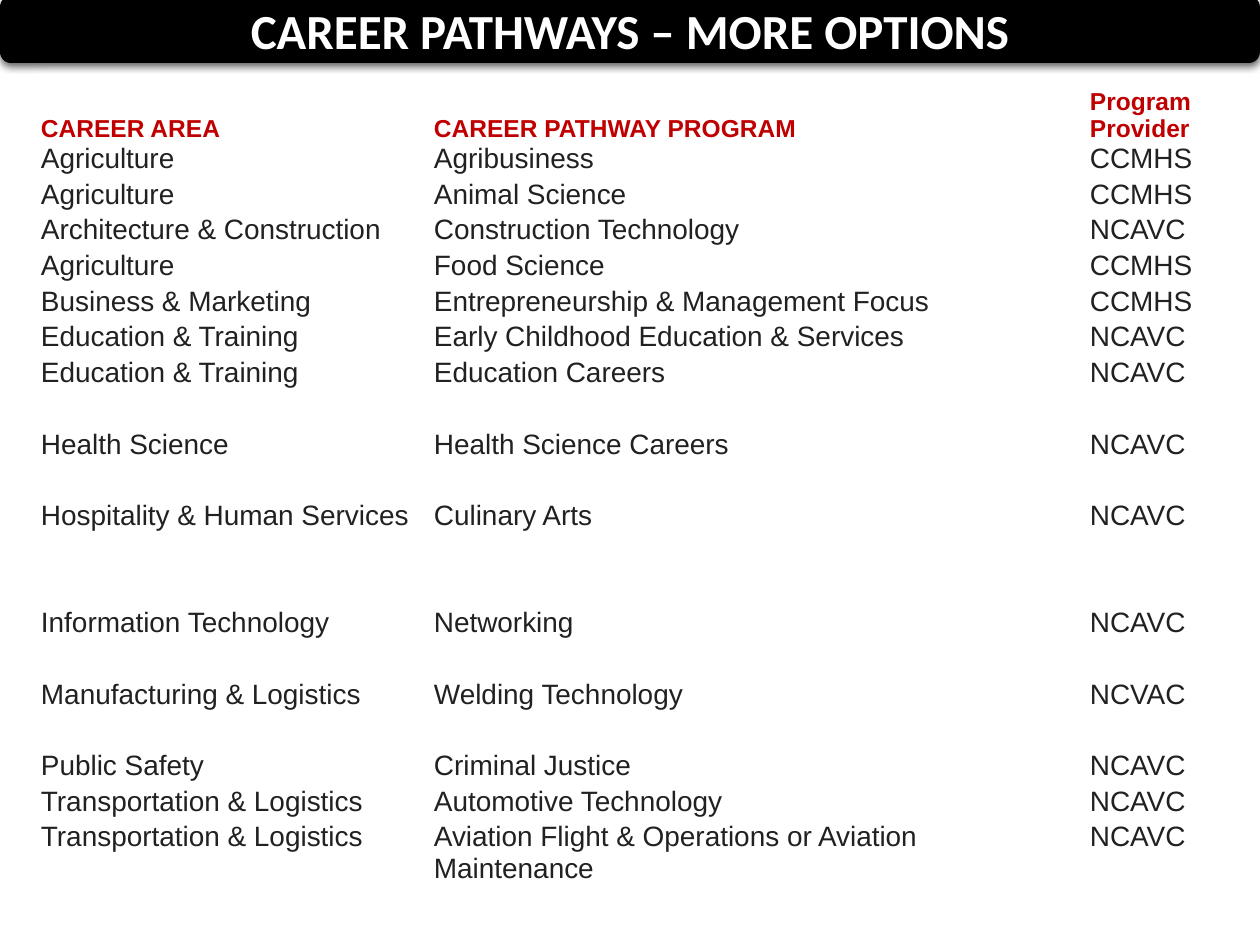
import lxml.etree
import pptx
import pptx.dml.color
import pptx.enum.shapes
import pptx.enum.text
import pptx.oxml
import pptx.oxml.ns
import pptx.util

ANCHOR = pptx.enum.text.MSO_ANCHOR
ALIGN = pptx.enum.text.PP_ALIGN
RGB = pptx.dml.color.RGBColor.from_string

THEME = {
    "banner": "000000",
    "title": {"name": "Calibri", "size": 28, "bold": True, "color": "FFFFFF"},
    "head": {"name": "Arial", "size": 14, "bold": True, "color": "C00000"},
    "body": {"name": "Arial", "size": 16, "bold": False, "color": "212120"},
}
HEADER = ("CAREER AREA", "CAREER PATHWAY PROGRAM", "Program Provider")
GAP = ("", "", "")
ROWS = [
    HEADER,
    ("Agriculture", "Agribusiness", "CCMHS"),
    ("Agriculture", "Animal Science", "CCMHS"),
    ("Architecture & Construction", "Construction Technology", "NCAVC"),
    ("Agriculture", "Food Science", "CCMHS"),
    ("Business & Marketing", "Entrepreneurship & Management Focus", "CCMHS"),
    ("Education & Training", "Early Childhood Education & Services", "NCAVC"),
    ("Education & Training", "Education Careers", "NCAVC"),
    GAP,
    ("Health Science", "Health Science Careers", "NCAVC"),
    GAP,
    ("Hospitality & Human Services", "Culinary Arts", "NCAVC"),
    GAP,
    GAP,
    ("Information Technology", "Networking", "NCAVC"),
    GAP,
    ("Manufacturing & Logistics", "Welding Technology", "NCVAC"),
    GAP,
    ("Public Safety", "Criminal Justice", "NCAVC"),
    ("Transportation & Logistics", "Automotive Technology", "NCAVC"),
    ("Transportation & Logistics", "Aviation Flight & Operations or Aviation Maintenance", "NCAVC"),
]
COL_WIDTHS = (393, 656, 179)
HEAD_HEIGHT = 53
BODY_HEIGHT = 715


def px(n):
    return pptx.util.Emu(round(n * 914400 / 126))


def write(p, text, style):
    r = p.add_run()
    r.text = text
    for key, value in style.items():
        if key == "color":
            r.font.color.rgb = RGB(value)
        else:
            setattr(r.font, key, pptx.util.Pt(value) if key == "size" else value)


prs = pptx.Presentation()
prs.slide_width, prs.slide_height = px(1260), px(945)
slide = prs.slides.add_slide(prs.slide_layouts[6])

sp = slide.shapes.add_shape(
    pptx.enum.shapes.MSO_SHAPE.ROUNDED_RECTANGLE, px(0), px(-4), px(1260), px(67)
)
sp.fill.solid()
sp.fill.fore_color.rgb = RGB(THEME["banner"])
sp.line.fill.background()
sp.shadow.inherit = False
effects = sp._element.spPr.find(pptx.oxml.ns.qn("a:effectLst"))
effects.append(pptx.oxml.parse_xml(
    f'<a:outerShdw {pptx.oxml.ns.nsdecls("a")} blurRad="57150" dist="19050" dir="5400000" '
    'algn="ctr" rotWithShape="0"><a:srgbClr val="000000"><a:alpha val="63000"/></a:srgbClr></a:outerShdw>'
))
tf = sp.text_frame
tf.word_wrap = True
tf.vertical_anchor = ANCHOR.MIDDLE
for side in ("left", "right", "top", "bottom"):
    setattr(tf, f"margin_{side}", px(13))
p = tf.paragraphs[0]
p.alignment = ALIGN.CENTER
write(p, "CAREER PATHWAYS – MORE OPTIONS", THEME["title"])

frame = slide.shapes.add_table(
    len(ROWS), len(COL_WIDTHS), px(32), px(88), px(sum(COL_WIDTHS)), px(HEAD_HEIGHT + BODY_HEIGHT)
)
table = frame.table
table.first_row = False
table.horz_banding = False
for column, width in zip(table.columns, COL_WIDTHS):
    column.width = px(width)

cell_format = {"margin_left": px(9), "margin_right": px(9), "margin_top": 0, "margin_bottom": 0}
for i, row in enumerate(ROWS):
    is_head = row is HEADER
    style = THEME["head" if is_head else "body"]
    table.rows[i].height = px(HEAD_HEIGHT if is_head else BODY_HEIGHT / (len(ROWS) - 1))
    for j, text in enumerate(row):
        cell = table.cell(i, j)
        cell.fill.background()
        for key, value in cell_format.items():
            setattr(cell, key, value)
        cell.vertical_anchor = ANCHOR.BOTTOM if is_head else ANCHOR.TOP
        p = cell.text_frame.paragraphs[0]
        if text:
            write(p, text, style)
        else:
            end = lxml.etree.SubElement(p._p, pptx.oxml.ns.qn("a:endParaRPr"))
            end.set("sz", str(style["size"] * 100))

prs.save("out.pptx")
